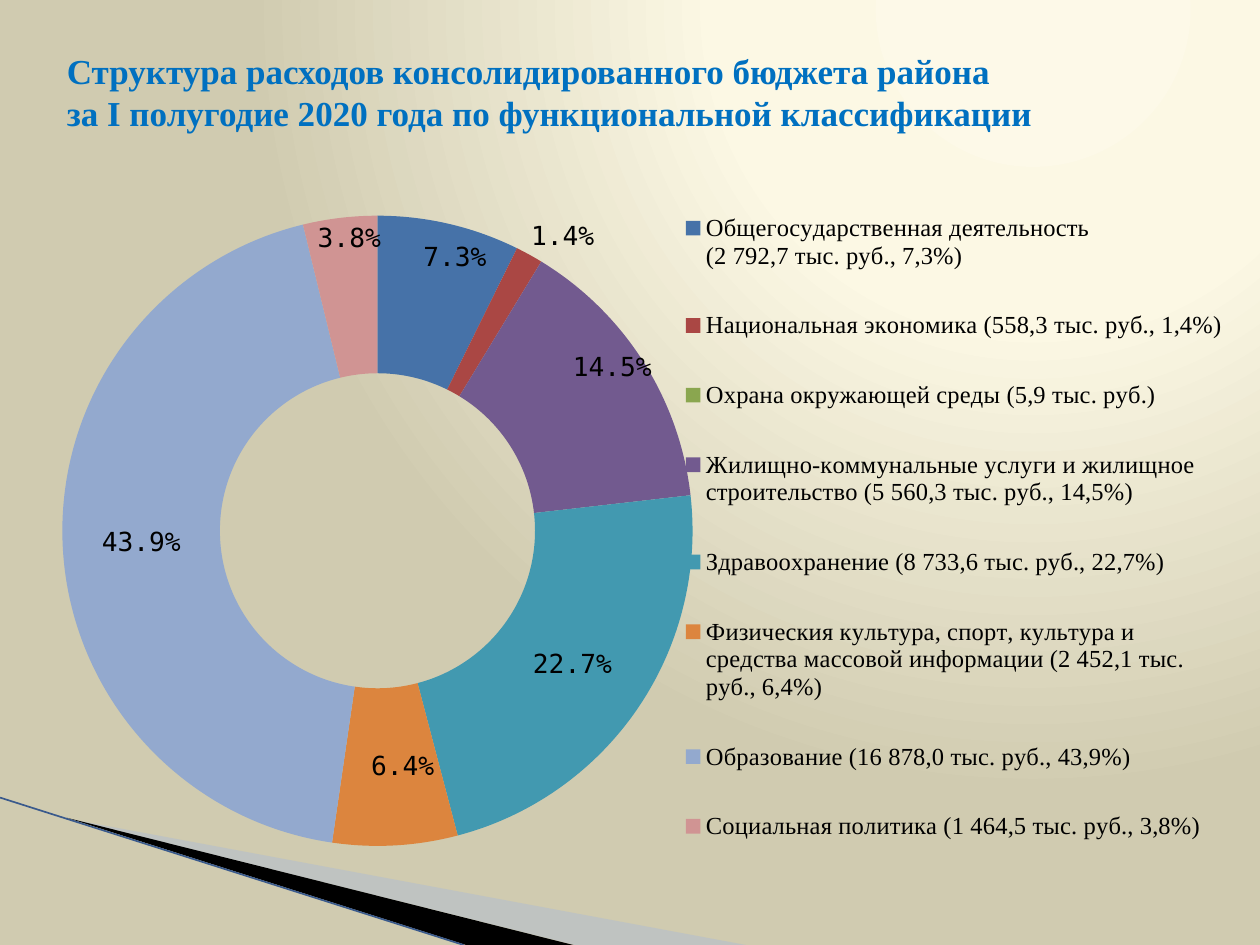
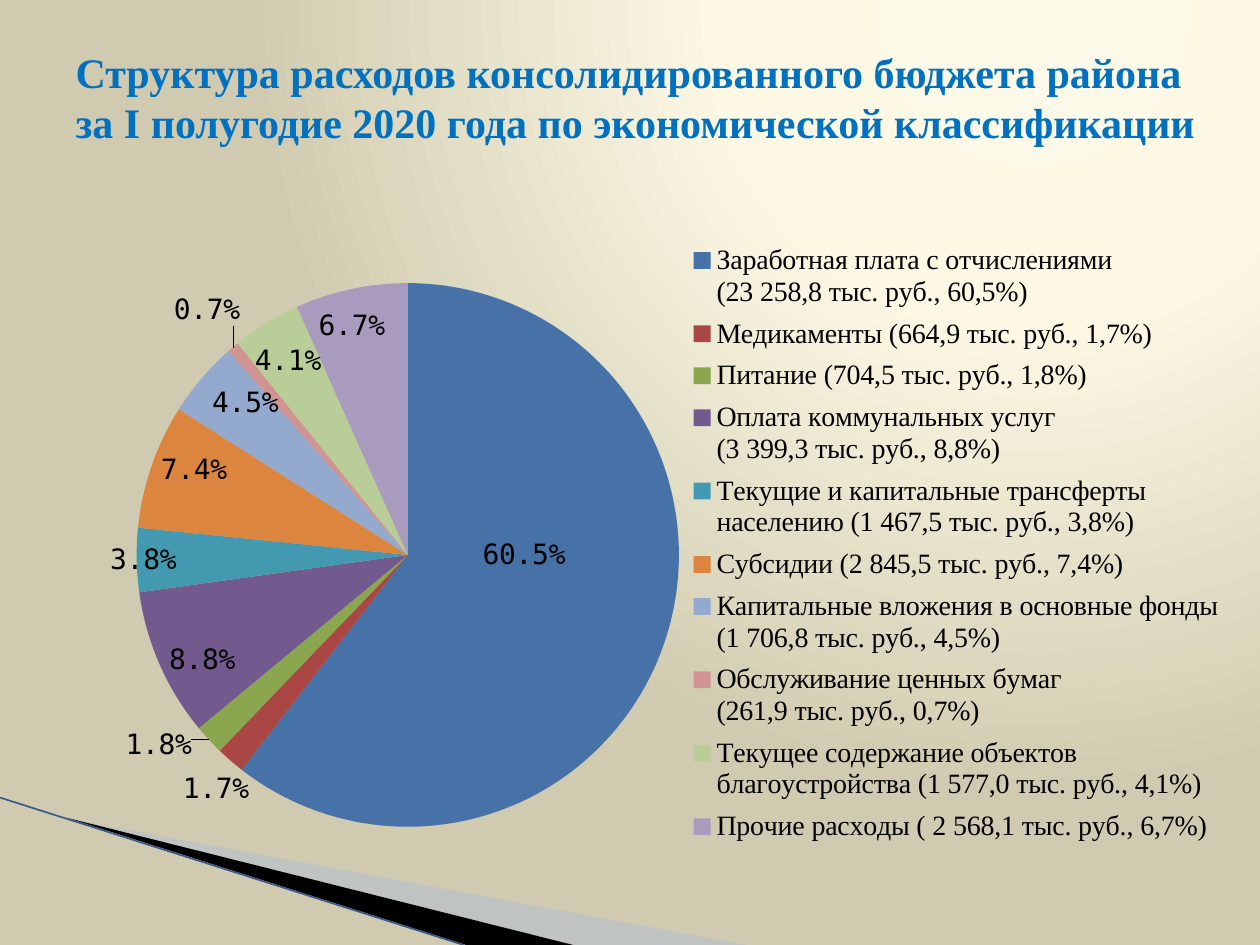
from lxml import etree
from pptx import Presentation
from pptx.chart.data import CategoryChartData
from pptx.dml.color import RGBColor
from pptx.enum.chart import XL_CHART_TYPE, XL_LABEL_POSITION, XL_LEGEND_POSITION
from pptx.enum.shapes import MSO_CONNECTOR
from pptx.enum.text import MSO_ANCHOR, PP_ALIGN
from pptx.oxml import parse_xml
from pptx.oxml.ns import nsdecls, qn
from pptx.util import Inches, Pt

TITLE_BLUE = RGBColor(0x00, 0x70, 0xC0)
BLACK = RGBColor(0x00, 0x00, 0x00)
PALE_BLUE = RGBColor(0xA7, 0xB9, 0xDB)
LINE_BLUE = RGBColor(0x3A, 0x5A, 0x8C)
SECTOR_COLOURS = [RGBColor.from_string(code) for code in (
    "4672A8", "AA4744", "8AA64F", "725A8F", "4299B0",
    "DC853E", "93A9CE", "D09493", "B8CD97", "A99BBD")]
BACKGROUND_STOPS = [(0, "FDF9E8"), (40, "FCF8E4"), (100, "D0CBB0")]
TITLE_FONT = "Times New Roman"
LABEL_FONT = "DejaVu Sans Mono"
PERCENT = "0.0%"

# Each row: legend entry, share, label offset as a fraction of the chart
FUNCTIONAL = [
    ("Общегосударственная деятельность\n(2 792,7 тыс. руб., 7,3%)", 0.073, (0.02, -0.06)),
    ("Национальная экономика (558,3 тыс. руб., 1,4%)", 0.014, (0.06, -0.12)),
    ("Охрана окружающей среды (5,9 тыс. руб.)", None, None),
    ("Жилищно-коммунальные услуги и жилищное строительство "
     "(5 560,3 тыс. руб., 14,5%)", 0.145, (0.03, -0.05)),
    ("Здравоохранение (8 733,6 тыс. руб., 22,7%)", 0.227, None),
    ("Физическия культура, спорт, культура и средства массовой информации "
     "(2 452,1 тыс. руб., 6,4%)", 0.064, (0.01, 0)),
    ("Образование (16 878,0 тыс. руб., 43,9%)", 0.439, None),
    ("Социальная политика (1 464,5 тыс. руб., 3,8%)", 0.038, (0, -0.08)),
]
ECONOMIC = [
    ("Заработная плата с отчислениями\n(23 258,8 тыс. руб., 60,5%)", 0.605, (-0.16, -0.14)),
    ("Медикаменты (664,9 тыс. руб., 1,7%)", 0.017, (0.02, 0.01)),
    ("Питание (704,5 тыс. руб., 1,8%)", 0.018, (-0.01, -0.02)),
    ("Оплата коммунальных услуг\n(3 399,3 тыс. руб., 8,8%)", 0.088, (0.07, -0.03)),
    ("Текущие и капитальные трансферты населению "
     "(1 467,5 тыс. руб., 3,8%)", 0.038, (0.04, 0)),
    ("Субсидии (2 845,5 тыс. руб., 7,4%)", 0.074, (0.07, 0.03)),
    ("Капитальные вложения в основные фонды "
     "(1 706,8 тыс. руб., 4,5%)", 0.045, (0.07, 0.06)),
    ("Обслуживание ценных бумаг\n(261,9 тыс. руб., 0,7%)", 0.007, (0.01, -0.02)),
    ("Текущее содержание объектов благоустройства "
     "(1 577,0 тыс. руб., 4,1%)", 0.041, (0.05, 0.08)),
    ("Прочие расходы ( 2 568,1 тыс. руб., 6,7%)", 0.067, (0.03, 0.08)),
]


def set_background(master):
    stops = "".join(
        f'<a:gs pos="{position * 1000}"><a:srgbClr val="{colour}"/></a:gs>'
        for position, colour in BACKGROUND_STOPS)
    background = parse_xml(
        f'<p:bg {nsdecls("p", "a")}><p:bgPr><a:gradFill rotWithShape="1">'
        f'<a:gsLst>{stops}</a:gsLst><a:path path="circle">'
        '<a:fillToRect l="65000" t="0" r="0" b="98000"/></a:path></a:gradFill>'
        '<a:effectLst/></p:bgPr></p:bg>')
    common = master.element.find(qn("p:cSld"))
    existing = common.find(qn("p:bg"))
    if existing is not None:
        common.remove(existing)
    common.insert(0, background)


def add_wedge(page, points, colour, opacity=100):
    corners = [(Inches(x), Inches(y)) for x, y in points]
    builder = page.shapes.build_freeform(*corners[0])
    builder.add_line_segments(corners[1:])
    wedge = builder.convert_to_shape()
    wedge.shadow.inherit = False
    wedge.fill.solid()
    wedge.fill.fore_color.rgb = colour
    wedge.line.fill.background()
    if opacity < 100:
        tint = next(wedge.element.iter(qn("a:srgbClr")))
        etree.SubElement(tint, qn("a:alpha")).set("val", str(opacity * 1000))


def add_corner_band(page):
    add_wedge(page, [(0.55, 6.5), (5.92, 7.5), (4.56, 7.5)], PALE_BLUE, opacity=40)
    add_wedge(page, [(0.53, 6.49), (4.55, 7.5), (3.7, 7.5)], BLACK)
    edge = page.shapes.add_connector(
        MSO_CONNECTOR.STRAIGHT, Inches(0), Inches(6.33), Inches(3.68), Inches(7.5))
    edge.line.color.rgb = LINE_BLUE
    edge.line.width = Pt(0.95)
    etree.SubElement(edge.element.spPr, qn("a:effectLst"))


def set_title(page, text, left, top, width, height, size):
    title = page.shapes.title
    title.left, title.top = Inches(left), Inches(top)
    title.width, title.height = Inches(width), Inches(height)
    frame = title.text_frame
    frame.text = text
    frame.word_wrap = True
    frame.vertical_anchor = MSO_ANCHOR.MIDDLE
    para = frame.paragraphs[0]
    para.alignment = PP_ALIGN.LEFT
    for span in para.runs:
        span.font.name = TITLE_FONT
        span.font.size = Pt(size)
        span.font.bold = True
        span.font.color.rgb = TITLE_BLUE


def set_layout(parent, index, **settings):
    """Give a chart part a manual layout, as its child number index."""
    for existing in parent.findall(qn("c:layout")):
        parent.remove(existing)
    layout = parse_xml(f'<c:layout {nsdecls("c")}><c:manualLayout/></c:layout>')
    for name, value in settings.items():
        etree.SubElement(layout[0], qn(f"c:{name}")).set("val", str(value))
    parent.insert(index, layout)


def place_area(parent, index, area, **target):
    x, y, w, h = area
    set_layout(parent, index, **target, xMode="edge", yMode="edge", x=x, y=y, w=w, h=h)


def format_font(font, name, size):
    font.name = name
    font.size = Pt(size)
    font.color.rgb = BLACK


def format_labels(chart, rows, size, position):
    series = chart.plots[0].series[0]
    labels = series.data_labels
    labels.show_value = True
    labels.show_percentage = False
    labels.number_format = PERCENT
    labels.number_format_is_linked = False
    format_font(labels.font, LABEL_FONT, size)
    if position is not None:
        labels.position = position
    for index, (_, _, offset) in enumerate(rows):
        if offset is not None:
            label = series.points[index].data_label
            format_font(label.font, LABEL_FONT, size)
            if position is not None:
                label.position = position
    for element in chart.element.iter(qn("c:dLbl")):
        x, y = rows[int(element.find(qn("c:idx")).get("val"))][2]
        set_layout(element, 1, x=x, y=y)
        element.insert(2, parse_xml(
            f'<c:numFmt {nsdecls("c")} formatCode="{PERCENT}" sourceLinked="0"/>'))
    for group in chart.element.iter(qn("c:dLbls")):
        for body in group.iter(qn("a:bodyPr")):
            body.set("wrap", "none")


def add_share_chart(page, kind, rows, box, plot_area, legend_area,
                    label_size, legend_size, position=None):
    data = CategoryChartData(number_format=PERCENT)
    data.categories = [name for name, _, _ in rows]
    data.add_series("Series 1", [share for _, share, _ in rows])
    chart = page.shapes.add_chart(kind, *map(Inches, box), data).chart
    chart.has_title = False
    format_font(chart.font, LABEL_FONT, 18)
    chart.plots[0].vary_by_categories = True
    for index in range(len(rows)):
        sector = chart.plots[0].series[0].points[index].format
        sector.fill.solid()
        sector.fill.fore_color.rgb = SECTOR_COLOURS[index]
        sector.line.fill.background()
    format_labels(chart, rows, label_size, position)
    chart.has_legend = True
    chart.legend.position = XL_LEGEND_POSITION.RIGHT
    chart.legend.include_in_layout = False
    format_font(chart.legend.font, TITLE_FONT, legend_size)
    place_area(next(chart.element.iter(qn("c:legend"))), 1, legend_area)
    place_area(next(chart.element.iter(qn("c:plotArea"))), 0, plot_area,
               layoutTarget="inner")


def add_page(deck):
    page = deck.slides.add_slide(deck.slide_layouts[5])
    add_corner_band(page)
    return page


def main():
    deck = Presentation()
    deck.slide_width, deck.slide_height = Inches(10), Inches(7.5)
    set_background(deck.slide_master)

    page = add_page(deck)
    add_share_chart(page, XL_CHART_TYPE.DOUGHNUT, FUNCTIONAL, (0.35, 1.31, 9.45, 5.75),
                    plot_area=(0.01, 0.07, 0.54, 0.87),
                    legend_area=(0.54, 0.01, 0.46, 0.98),
                    label_size=15, legend_size=14)
    set_title(page, "Структура расходов консолидированного бюджета района\v"
              "за I полугодие 2020 года по функциональной классификации",
              0.43, 0.3, 9.29, 0.85, size=20)

    page = add_page(deck)
    add_share_chart(page, XL_CHART_TYPE.PIE, ECONOMIC, (0.5, 1.62, 9.38, 5.99),
                    plot_area=(0.06, 0.1, 0.46, 0.73),
                    legend_area=(0.52, 0.04, 0.47, 0.82),
                    label_size=16, legend_size=16,
                    position=XL_LABEL_POSITION.OUTSIDE_END)
    set_title(page, "Структура расходов консолидированного бюджета района "
              "за I полугодие 2020 года по экономической классификации",
              0.5, 0.3, 9.15, 0.93, size=24)

    deck.save("out.pptx")


if __name__ == "__main__":
    main()
